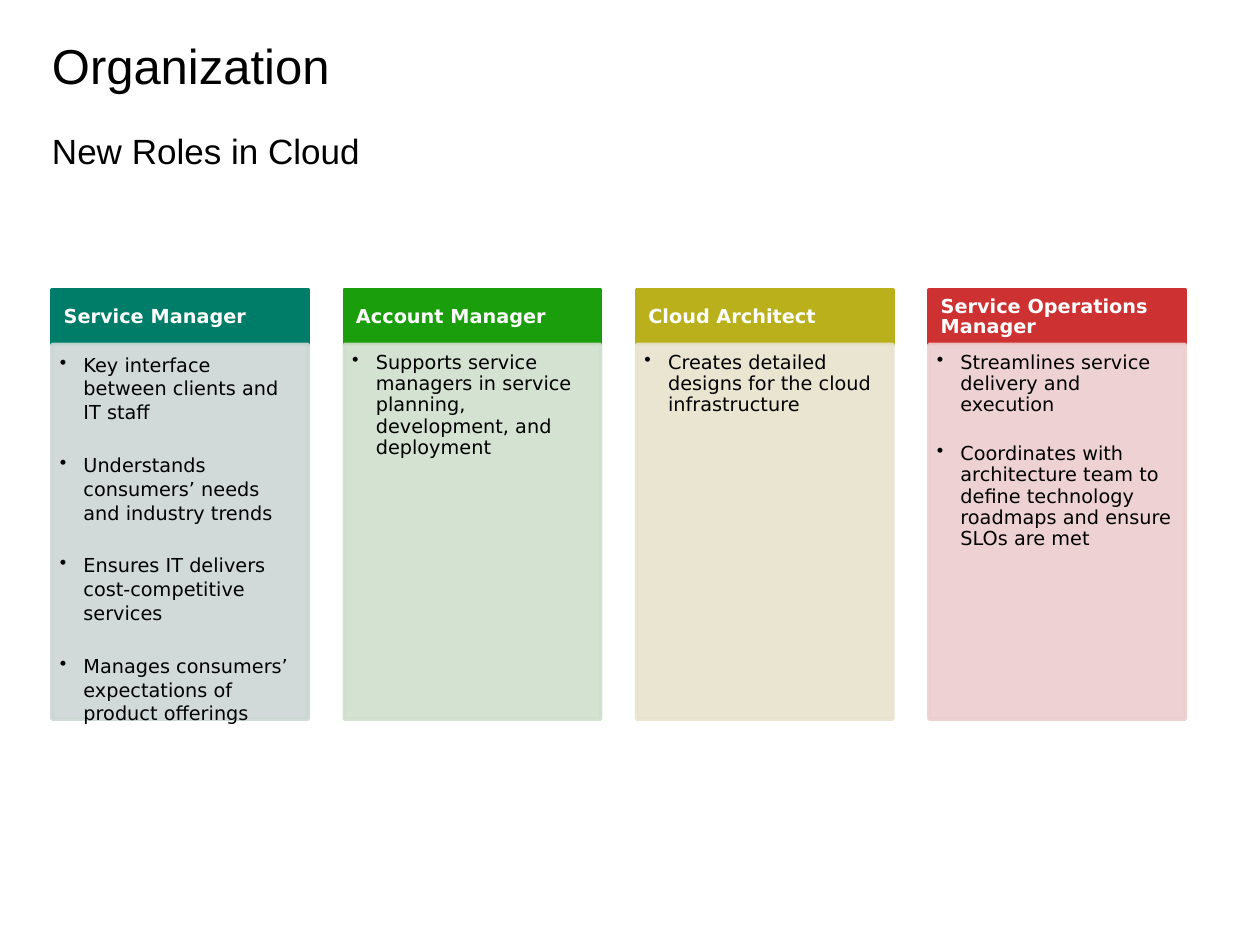
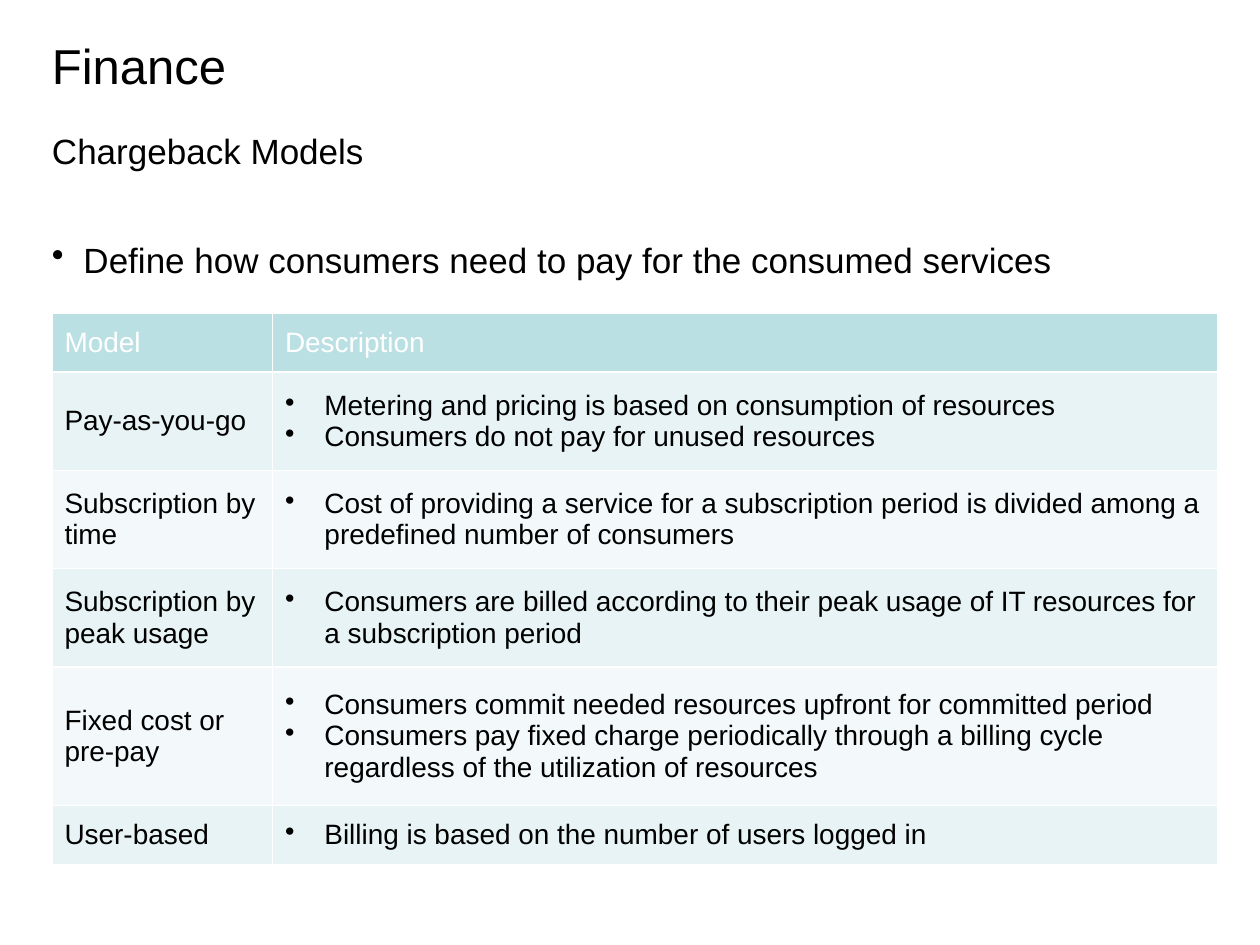
from lxml import etree
from pptx import Presentation
from pptx.dml.color import RGBColor
from pptx.enum import shapes, text
from pptx.oxml import ns
from pptx.util import Pt

ROLES = [
    ("Service Manager", "teal", 1.03, 16.6, [
        "Key interface between clients and IT staff",
        "Understands consumers’ needs and industry trends",
        "Ensures IT delivers cost-competitive services",
        "Manages consumers’ expectations of product offerings"]),
    ("Account Manager", "green", 0.92, 15.6, [
        "Supports service managers in service planning, development, and deployment"]),
    ("Cloud Architect", "olive", 0.92, 15.6, [
        "Creates detailed designs for the cloud infrastructure"]),
    ("Service Operations Manager", "red", 0.92, 15.6, [
        "Streamlines service delivery and execution",
        "Coordinates with architecture team to define technology roadmaps and ensure SLOs are met"]),
]
CHARGEBACK_INTRO = "Define how consumers need to pay for the consumed services"
MODEL_HEADINGS = ("Model", "Description")
MODELS = [
    ("Pay-as-you-go", 56.2, [
        "Metering and pricing is based on consumption of resources",
        "Consumers do not pay for unused resources"]),
    ("Subscription by time", 56.2, [
        "Cost of providing a service for a subscription period is divided among "
        "a predefined number of consumers"]),
    ("Subscription by peak usage", 56.2, [
        "Consumers are billed according to their peak usage of IT resources for "
        "a subscription period"]),
    ("Fixed cost or pre-pay", 79.2, [
        "Consumers commit needed resources upfront for committed period",
        "Consumers pay fixed charge periodically through a billing cycle "
        "regardless of the utilization of resources"]),
    ("User-based", 33.6, ["Billing is based on the number of users logged in"]),
]
COLOURS = {
    "black": "000000", "white": "FFFFFF",
    "teal": "007D68", "teal_pale": "CCD7D4",
    "green": "1B9E0B", "green_pale": "D0DFCC",
    "olive": "B9B01B", "olive_pale": "E7E3CD",
    "red": "CE3131", "red_pale": "EDCECF",
    "heading": "BBE0E3", "band_odd": "E7F3F4", "band_even": "F3F9FA",
}
SANS, ROLE_FONT = "Arial", "DejaVu Sans"
LEFT, WIDTH = 29.7, 666
ROLE_WIDTH, ROLE_PITCH = 146.5, 167.05
HEADER_TOP, HEADER_HEIGHT, PANEL_HEIGHT = 165.6, 31.2, 214.1
HEADING_HEIGHT = 33.6
MODEL_COLUMNS = (126, 540)


def colour(name):
    return RGBColor.from_string(COLOURS[name])


def add_element(parent, tag, **attributes):
    return etree.SubElement(parent, ns.qn(tag), attributes)


def write(frame, lines, size, font=SANS, ink="black", bold=False,
          indent=0, spacing=None, gap=0):
    for number, line in enumerate(lines):
        para = frame.paragraphs[0] if number == 0 else frame.add_paragraph()
        para.text = line
        para.alignment = text.PP_ALIGN.LEFT
        if indent:
            properties = para._p.get_or_add_pPr()
            properties.set("marL", str(Pt(indent)))
            properties.set("indent", str(-Pt(indent)))
            add_element(properties, "a:buChar", char="•")
        if spacing:
            para.line_spacing = spacing
        para.space_before = Pt(gap if number else 0)
        para.space_after = Pt(0)
        para.font.name, para.font.size, para.font.bold = font, Pt(size), bold
        para.font.color.rgb = colour(ink)


def set_frame(frame, margins=(0, 0, 0, 0), anchor=text.MSO_ANCHOR.TOP):
    frame.word_wrap = True
    frame.auto_size = text.MSO_AUTO_SIZE.NONE
    frame.vertical_anchor = anchor
    (frame.margin_left, frame.margin_top,
     frame.margin_right, frame.margin_bottom) = map(Pt, margins)
    return frame


def add_text(page, top, height, line, **style):
    box = page.shapes.add_textbox(Pt(LEFT), Pt(top), Pt(WIDTH), Pt(height))
    write(set_frame(box.text_frame), [line], 20, **style)


def add_page(deck, title, subtitle):
    page = deck.slides.add_slide(deck.slide_layouts[5])
    box = page.shapes.title
    box.left, box.top, box.width, box.height = map(Pt, (LEFT, 23.8, WIDTH, 48.2))
    write(set_frame(box.text_frame), [title], 28, spacing=0.9)
    add_text(page, 74.2, 31.7, subtitle)
    return page


def add_block(page, left, top, height, paint, opacity=100):
    block = page.shapes.add_shape(shapes.MSO_SHAPE.RECTANGLE, Pt(left), Pt(top),
                                  Pt(ROLE_WIDTH), Pt(height))
    block.shadow.inherit = False
    block.line.width = Pt(2)
    for fill in (block.fill, block.line.fill):
        fill.solid()
        fill.fore_color.rgb = colour(paint)
    properties = block._element.spPr
    add_element(properties.find(ns.qn("a:ln")), "a:round")
    if opacity < 100:
        for tint in properties.iter(ns.qn("a:srgbClr")):
            add_element(tint, "a:alpha", val=str(opacity * 1000))
    return block.text_frame


def add_role(page, left, name, paint, spacing, gap, duties):
    header = add_block(page, left, HEADER_TOP, HEADER_HEIGHT, paint)
    set_frame(header, (6.7, 3.8, 6.7, 3.8), text.MSO_ANCHOR.MIDDLE)
    write(header, [name], 11, ROLE_FONT, "white", bold=True, spacing=0.9)
    panel = add_block(page, left, HEADER_TOP + HEADER_HEIGHT, PANEL_HEIGHT,
                      paint + "_pale", opacity=90)
    set_frame(panel, (4.5, 4.5, 6.7, 7.2))
    write(panel, duties, 11, ROLE_FONT, indent=13.5, spacing=spacing, gap=gap)


def fill_cell(cell, lines, paint, ink="black", indent=0):
    properties = cell._tc.get_or_add_tcPr()
    for side in ("a:lnL", "a:lnR", "a:lnT", "a:lnB"):
        border = add_element(properties, side, w=str(Pt(1)))
        add_element(add_element(border, "a:solidFill"), "a:srgbClr", val=COLOURS["white"])
    cell.fill.solid()
    cell.fill.fore_color.rgb = colour(paint)
    cell.vertical_anchor = text.MSO_ANCHOR.MIDDLE
    write(cell.text_frame, lines, 16, ink=ink, indent=indent)


def add_models(page):
    heights = [HEADING_HEIGHT] + [height for _, height, _ in MODELS]
    table = page.shapes.add_table(len(heights), len(MODEL_COLUMNS), Pt(LEFT), Pt(179),
                                  Pt(WIDTH), Pt(sum(heights))).table
    for column, width in zip(table.columns, MODEL_COLUMNS):
        column.width = Pt(width)
    for row, height in zip(table.rows, heights):
        row.height = Pt(height)
    for column, heading in enumerate(MODEL_HEADINGS):
        fill_cell(table.cell(0, column), [heading], "heading", "white")
    for row, (model, _, points) in enumerate(MODELS, 1):
        band = "band_odd" if row % 2 else "band_even"
        fill_cell(table.cell(row, 0), [model], band)
        fill_cell(table.cell(row, 1), points, band, indent=22.5)


def main():
    deck = Presentation()
    deck.slide_width, deck.slide_height = Pt(720), Pt(540)

    organization = add_page(deck, "Organization", "New Roles in Cloud")
    for number, role in enumerate(ROLES):
        add_role(organization, LEFT + number * ROLE_PITCH, *role)

    finance = add_page(deck, "Finance", "Chargeback Models")
    add_text(finance, 136.1, 32, CHARGEBACK_INTRO, indent=18)
    add_models(finance)

    deck.save("out.pptx")


if __name__ == "__main__":
    main()
